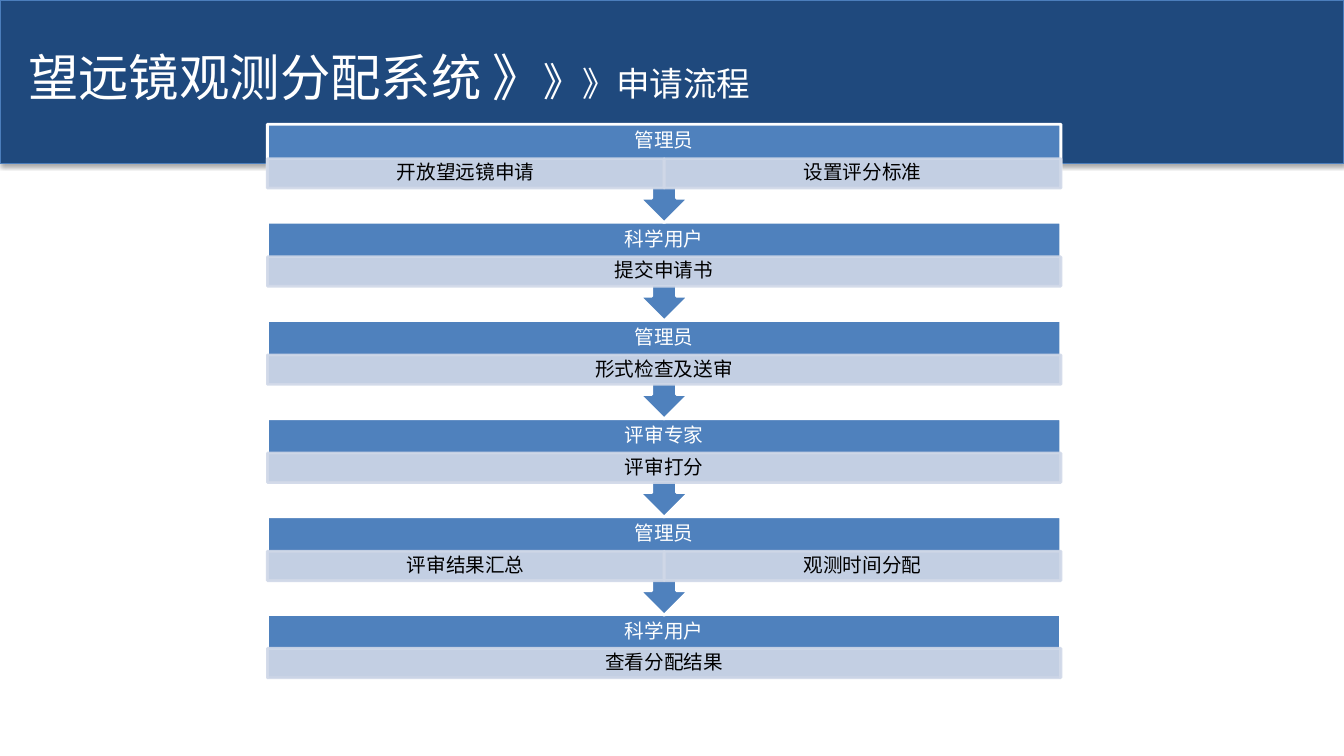
import pptx
import pptx.dml.color
import pptx.enum.shapes
import pptx.enum.text
import pptx.oxml
import pptx.oxml.ns
import pptx.util

Pt = pptx.util.Pt
SHAPE = pptx.enum.shapes.MSO_SHAPE
ALIGN = pptx.enum.text.PP_ALIGN

NAVY, NAVY_EDGE = "1F497D", "4B7EBC"
BLUE, PALE, WHITE, BLACK = "4F81BD", "D0D8E8", "FFFFFF", "000000"

LEFT, TOP, WIDTH = 191, 88.7, 566.8
PITCH, CALLOUT_H, LAST_H = 70.1, 70.4, 46
LABEL_H, STEP_H = 25, 21

STAGES = [
    ("管理员", ["开放望远镜申请", "设置评分标准"]),
    ("科学用户", ["提交申请书"]),
    ("管理员", ["形式检查及送审"]),
    ("评审专家", ["评审打分"]),
    ("管理员", ["评审结果汇总", "观测时间分配"]),
    ("科学用户", ["查看分配结果"]),
]


def rgb(value):
    return pptx.dml.color.RGBColor.from_string(value)


def add_alpha(sp, percent):
    """Make the solid fill and line of a shape partly transparent."""
    for color in sp._element.spPr.iter(pptx.oxml.ns.qn("a:srgbClr")):
        color.append(color.makeelement(
            pptx.oxml.ns.qn("a:alpha"), {"val": str(percent * 1000)}))


class Deck:
    latin, east_asian = "Calibri", "Noto Sans CJK SC"

    def __init__(self, width, height):
        self.prs = pptx.Presentation()
        self.prs.slide_width, self.prs.slide_height = Pt(width), Pt(height)
        self.s = self.prs.slides.add_slide(self.prs.slide_layouts[6])

    def shape(self, kind, box, fill, line, line_width=2, opacity=100):
        sp = self.s.shapes.add_shape(kind, *map(Pt, box))
        sp.shadow.inherit = False
        sp.fill.solid()
        sp.fill.fore_color.rgb = rgb(fill)
        sp.line.color.rgb = rgb(line)
        sp.line.width = Pt(line_width)
        if opacity < 100:
            add_alpha(sp, opacity)
        return sp

    def drop_shadow(self, sp, blur, distance, opacity):
        effects = sp._element.spPr.find(pptx.oxml.ns.qn("a:effectLst"))
        effects.append(pptx.oxml.parse_xml(
            f'<a:outerShdw {pptx.oxml.ns.nsdecls("a")} blurRad="{Pt(blur)}" '
            f'dist="{Pt(distance)}" dir="5400000" rotWithShape="0">'
            f'<a:srgbClr val="{BLACK}"><a:alpha val="{opacity * 1000}"/></a:srgbClr>'
            '</a:outerShdw>'))

    def textbox(self, box):
        return self.s.shapes.add_textbox(*map(Pt, box))

    def set_text(self, sp, runs, color, font, align=ALIGN.CENTER, spacing=0.9,
                 inset_x=8, inset_y=1.4):
        """Fill a shape with one paragraph of (text, size) runs."""
        tf = sp.text_frame
        tf.word_wrap = True
        tf.vertical_anchor = pptx.enum.text.MSO_ANCHOR.MIDDLE
        tf.margin_left = tf.margin_right = Pt(inset_x)
        tf.margin_top = tf.margin_bottom = Pt(inset_y)
        p = tf.paragraphs[0]
        p.alignment, p.line_spacing = align, spacing
        for text, size in runs:
            r = p.add_run()
            r.text = text
            r.font.size, r.font.name = Pt(size), font
            r.font.color.rgb = rgb(color)
            latin = r._r.rPr.find(pptx.oxml.ns.qn("a:latin"))
            latin.addnext(latin.makeelement(
                pptx.oxml.ns.qn("a:ea"), {"typeface": self.east_asian}))

    def header(self, runs):
        band = self.shape(SHAPE.RECTANGLE, (0, 0, 960, 116.6), NAVY, NAVY_EDGE, 0.75)
        self.drop_shadow(band, 3.1, 1.8, 35)
        self.set_text(self.textbox((13, 9.4, 648, 90)), runs, WHITE, self.east_asian,
                      ALIGN.LEFT, 1, 7.2, 3.6)

    def stage(self, top, role, steps, last):
        """Draw one role bar with its steps; all but the last point downwards."""
        if last:
            self.shape(SHAPE.RECTANGLE, (LEFT, top, WIDTH, LAST_H), BLUE, WHITE)
            step_top = top + 0.52 * LAST_H
        else:
            sp = self.shape(SHAPE.UP_ARROW_CALLOUT, (LEFT, top, WIDTH, CALLOUT_H),
                            BLUE, WHITE)
            sp.rotation = 180
            step_top = top + 0.35 * CALLOUT_H
        self.set_text(self.textbox((LEFT, top, WIDTH, LABEL_H)), [(role, 14)], WHITE,
                      self.latin, inset_y=8)
        step_w = WIDTH / len(steps)
        for i, step in enumerate(steps):
            sp = self.shape(SHAPE.RECTANGLE, (LEFT + i * step_w, step_top, step_w, STEP_H),
                            PALE, PALE, opacity=90)
            self.set_text(sp, [(step, 14)], BLACK, self.latin)


def main():
    deck = Deck(960, 540)
    deck.header([("望远镜观测分配系统 》", 36), ("》", 28), ("》申请流程", 24)])
    # Bottom stage first, so each arrow tip lies over the stage below it.
    for i, (role, steps) in reversed(list(enumerate(STAGES))):
        deck.stage(TOP + i * PITCH, role, steps, i == len(STAGES) - 1)
    deck.prs.save("out.pptx")


if __name__ == "__main__":
    main()
